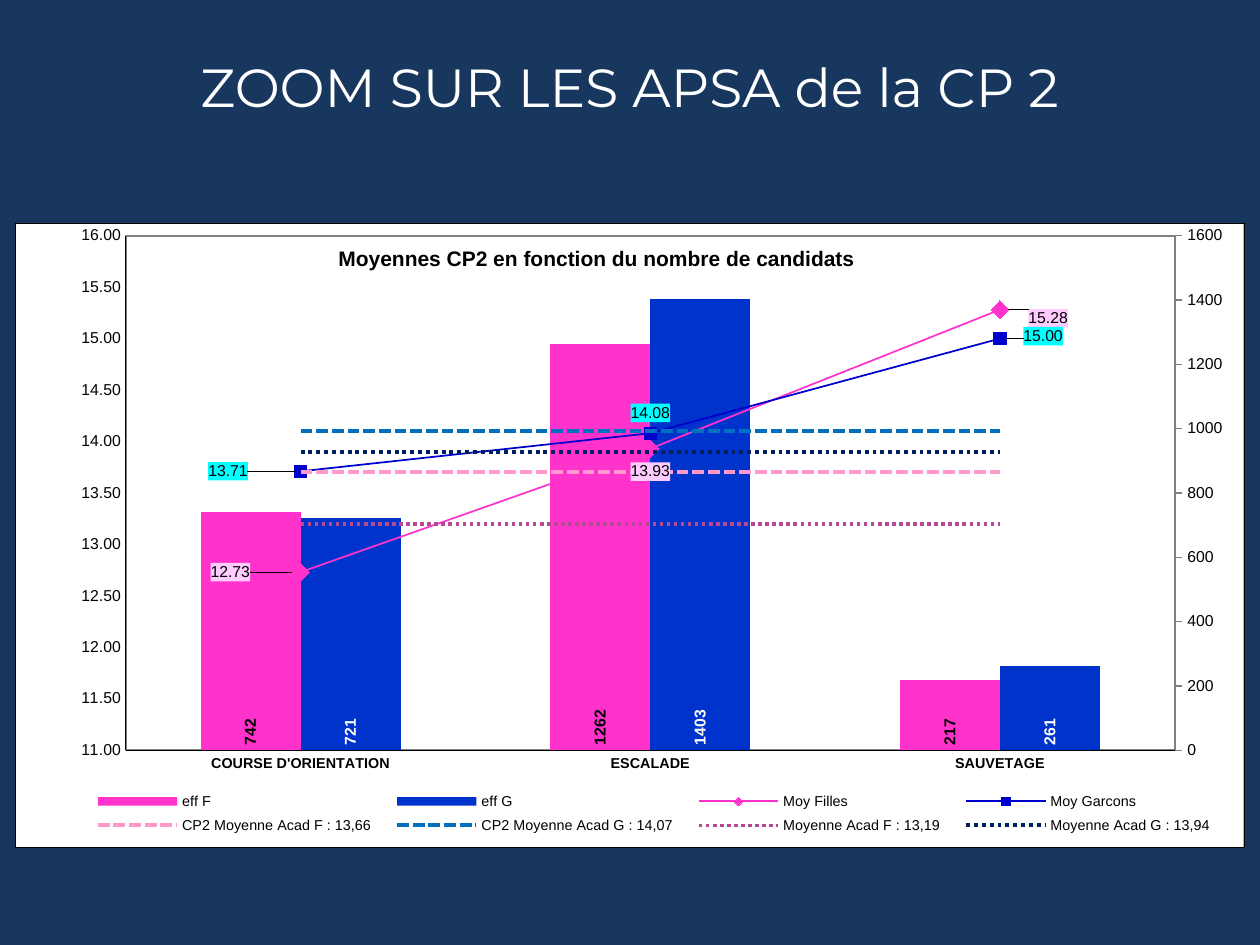
from copy import deepcopy

from pptx import Presentation
from pptx.chart.axis import ValueAxis
from pptx.chart.data import CategoryChartData
from pptx.dml.color import RGBColor
from pptx.enum.chart import (XL_CHART_TYPE, XL_LABEL_POSITION, XL_LEGEND_POSITION,
                             XL_MARKER_STYLE, XL_TICK_LABEL_POSITION, XL_TICK_MARK)
from pptx.enum.dml import MSO_LINE
from pptx.enum.text import MSO_ANCHOR, PP_ALIGN
from pptx.oxml import parse_xml
from pptx.oxml.ns import nsdecls, qn
from pptx.util import Pt

POS = XL_LABEL_POSITION
DASH, DOT = MSO_LINE.SQUARE_DOT, MSO_LINE.ROUND_DOT
SCALE = 914400 / 126
NO_LEADER = ('<c:ext uri="{CE6537A1-D6FC-4f65-9D91-7224C49458BB}" '
             'xmlns:c15="http://schemas.microsoft.com/office/drawing/2012/chart">'
             '<c15:showLeaderLines val="0"/></c:ext>')


class Theme:
    back, white, black, edge = "17375E", "FFFFFF", "000000", "808080"
    head_font, body_font = "Montserrat", "Arial"
    head, title, body, small = 30.6, 12, 9, 8.2


SPORTS = ["COURSE D'ORIENTATION", "ESCALADE", "SAUVETAGE"]

# name, counts, fill, label colour
BARS = [("eff F", (742, 1262, 217), "FF33CC", Theme.black),
        ("eff G", (721, 1403, 261), "0033CC", Theme.white)]

# name, marks, colour, marker, marker size, label fill, label side, shifts of end labels
MARKS = [("Moy Filles", (12.73, 13.93, 15.28), "FF33CC", XL_MARKER_STYLE.DIAMOND, 10,
          "FFCCFF", POS.BELOW, ((-0.03, 0), (0.012, 0.014))),
         ("Moy Garcons", (13.71, 14.08, 15), "0000CC", XL_MARKER_STYLE.SQUARE, 7,
          "00FFFF", POS.ABOVE, ((-0.034, 0), (0.01, -0.004)))]

# name, mean, colour, dash, width
MEANS = [("CP2 Moyenne Acad F : 13,66", 13.7, "FF99CC", DASH, 2.25),
         ("CP2 Moyenne Acad G : 14,07", 14.1, "0070C0", DASH, 2.25),
         ("Moyenne Acad F : 13,19", 13.2, "B64A92", DOT, 2),
         ("Moyenne Acad G : 13,94", 13.9, "002060", DOT, 2.25)]


def px(*sizes):
    return [round(size * SCALE) for size in sizes]


def rgb(code):
    return RGBColor.from_string(code)


def style(font, size=Theme.body, color=Theme.black, bold=False, face=Theme.body_font):
    font.size, font.bold, font.name = Pt(size), bold, face
    font.color.rgb = rgb(color)


def add_text(slide, text, box, **look):
    frame = slide.shapes.add_textbox(*px(*box)).text_frame
    frame.word_wrap = True
    frame.vertical_anchor = MSO_ANCHOR.MIDDLE
    para = frame.paragraphs[0]
    para.alignment = PP_ALIGN.CENTER
    run = para.add_run()
    run.text = text
    style(run.font, **look)


def node(tag, body="", attrs=""):
    return parse_xml(f"<c:{tag} {nsdecls('c', 'a')} {attrs}>{body}</c:{tag}>")


def paint(fill, line=None, width=0.25):
    body = f'<a:solidFill><a:srgbClr val="{fill}"/></a:solidFill>'
    if line:
        body += (f'<a:ln w="{Pt(width)}"><a:solidFill><a:srgbClr val="{line}"/>'
                 '</a:solidFill></a:ln>')
    return node("spPr", body)


def layout(x, y, w=None, h=None, inner=False, edge=True):
    parts = ['<c:layoutTarget val="inner"/>'] if inner else []
    if edge:
        parts += ['<c:xMode val="edge"/>', '<c:yMode val="edge"/>']
    parts += [f'<c:{key} val="{val}"/>' for key, val in zip("xywh", (x, y, w, h))
              if val is not None]
    return node("layout", f"<c:manualLayout>{''.join(parts)}</c:manualLayout>")


def place(owner, index, new):
    for old in owner.findall(qn("c:layout")):
        owner.remove(old)
    owner.insert(index, new)


def split_lines(chart):
    """Move the series after the bars to a line plot on a second pair of axes."""
    area = chart.plots[0]._element.getparent()
    bars = area.find(qn("c:barChart"))
    lines = node("lineChart", '<c:grouping val="standard"/><c:varyColors val="0"/>')
    for ser in bars.findall(qn("c:ser"))[len(BARS):]:
        for flag in ser.findall(qn("c:invertIfNegative")):
            ser.remove(flag)
        lines.append(ser)
    lines.append(node("marker", attrs='val="1"'))
    bars.addnext(lines)
    cat, val = area.find(qn("c:catAx")), area.find(qn("c:valAx"))
    cat2, val2 = deepcopy(cat), deepcopy(val)
    for axis, own, other in ((cat2, "5001", "5002"), (val2, "5002", "5001")):
        axis.find(qn("c:axId")).set("val", own)
        axis.find(qn("c:crossAx")).set("val", other)
        lines.append(node("axId", attrs=f'val="{own}"'))
    val.addnext(val2)
    val2.addnext(cat2)
    cat2.find(qn("c:delete")).set("val", "1")
    val.find(qn("c:axPos")).set("val", "r")
    val.find(qn("c:crosses")).set("val", "max")
    return area, ValueAxis(val), ValueAxis(val2)


def set_axis(axis, low, high, step, fmt, tick, color):
    axis.minimum_scale, axis.maximum_scale, axis.major_unit = low, high, step
    axis.has_major_gridlines = False
    axis.major_tick_mark, axis.minor_tick_mark = tick, XL_TICK_MARK.NONE
    axis.tick_labels.number_format = fmt
    axis.tick_labels.number_format_is_linked = False
    axis.format.line.color.rgb = rgb(color)
    style(axis.tick_labels.font)


def set_bar(ser, fill, ink):
    ser.format.fill.solid()
    ser.format.fill.fore_color.rgb = rgb(fill)
    labels = ser.data_labels
    labels.show_value, labels.position = True, POS.INSIDE_BASE
    style(labels.font, color=ink, bold=True)
    turn = labels._element.find(qn("c:txPr")).find(qn("a:bodyPr"))
    turn.set("rot", "-5400000")
    turn.set("vert", "horz")


def set_line(ser, color, width, dash=None):
    ser.smooth = False
    ser.format.line.color.rgb = rgb(color)
    ser.format.line.width = Pt(width)
    if dash:
        ser.format.line.dash_style = dash
    ser.marker.style = XL_MARKER_STYLE.NONE


def set_marks(ser, color, marker, size, fill, side, shifts):
    ser.marker.style, ser.marker.size = marker, size
    ser.marker.format.fill.solid()
    ser.marker.format.fill.fore_color.rgb = rgb(color)
    ser.marker.format.line.color.rgb = rgb(color)
    labels = ser.data_labels
    labels.show_value, labels.position = True, side
    labels.number_format, labels.number_format_is_linked = "0.00", False
    style(labels.font)
    labels._element.find(qn("c:txPr")).addprevious(paint(fill))
    # End labels stand beside their points
    for index, spot, shift in zip((0, 2), (POS.LEFT, POS.RIGHT), shifts):
        label = ser.points[index].data_label
        style(label.font)
        label.position = spot
        text = labels._element.xpath(f"c:dLbl[c:idx/@val='{index}']/c:txPr")[0]
        for part in (layout(*shift, edge=False),
                     node("numFmt", attrs='formatCode="0.00" sourceLinked="0"'),
                     paint(fill)):
            text.addprevious(part)
    labels._element.append(node("extLst", NO_LEADER))


def add_combo(slide, box):
    data = CategoryChartData()
    data.categories = SPORTS
    for name, vals, *_ in BARS + MARKS:
        data.add_series(name, vals)
    for name, mean, *_ in MEANS:
        data.add_series(name, [mean] * len(SPORTS))
    chart = slide.shapes.add_chart(XL_CHART_TYPE.COLUMN_CLUSTERED, *px(*box), data).chart
    style(chart.font)
    area, right, left = split_lines(chart)

    # Frame and plot area
    chart._chartSpace.find(qn("c:chart")).addnext(paint(Theme.white, Theme.black))
    place(area, 0, layout(0.09, 0.02, 0.854, 0.824, inner=True))
    area.append(paint(Theme.white, Theme.edge, 1))

    # Title and legend
    chart.has_title = True
    frame = chart.chart_title.text_frame
    frame.text = "Moyennes CP2 en fonction du nombre de candidats"
    style(frame.paragraphs[0].runs[0].font, size=Theme.title, bold=True)
    title = chart.chart_title._element
    place(title, 1, layout(0.26, 0.03))
    title.find(qn("c:overlay")).set("val", "1")
    chart.has_legend = True
    legend = chart.legend
    legend.position, legend.include_in_layout = XL_LEGEND_POSITION.BOTTOM, False
    style(legend.font, size=Theme.small)
    place(legend._element, 1, layout(0.05, 0.9, 0.94, 0.09))

    # Axes
    set_axis(right, 0, 1600, 200, "0", XL_TICK_MARK.OUTSIDE, Theme.edge)
    right.tick_label_position = XL_TICK_LABEL_POSITION.HIGH
    set_axis(left, 11, 16, 0.5, "0.00", XL_TICK_MARK.NONE, Theme.black)
    sports = chart.category_axis
    sports.major_tick_mark = XL_TICK_MARK.NONE
    sports.format.line.color.rgb = rgb(Theme.black)
    style(sports.tick_labels.font, size=Theme.small, bold=True)

    # Series
    bars, lines = chart.plots
    bars.gap_width, bars.overlap, bars.vary_by_categories = 150, 0, False
    for ser, (_, _, fill, ink) in zip(bars.series, BARS):
        set_bar(ser, fill, ink)
    drawn = list(lines.series)
    for ser, (_, _, color, *look) in zip(drawn, MARKS):
        set_line(ser, color, 1)
        set_marks(ser, color, *look)
    for ser, (_, _, color, dash, width) in zip(drawn[len(MARKS):], MEANS):
        set_line(ser, color, width, dash)


def main():
    deck = Presentation()
    deck.slide_width, deck.slide_height = px(1260, 945)
    slide = deck.slides.add_slide(deck.slide_layouts[6])
    slide.background.fill.solid()
    slide.background.fill.fore_color.rgb = rgb(Theme.back)
    add_text(slide, "ZOOM SUR LES APSA de la CP 2", (0, 57, 1259, 58),
             size=Theme.head, color=Theme.white, face=Theme.head_font)
    add_combo(slide, (15, 223, 1229, 625))
    deck.save("out.pptx")


if __name__ == "__main__":
    main()
